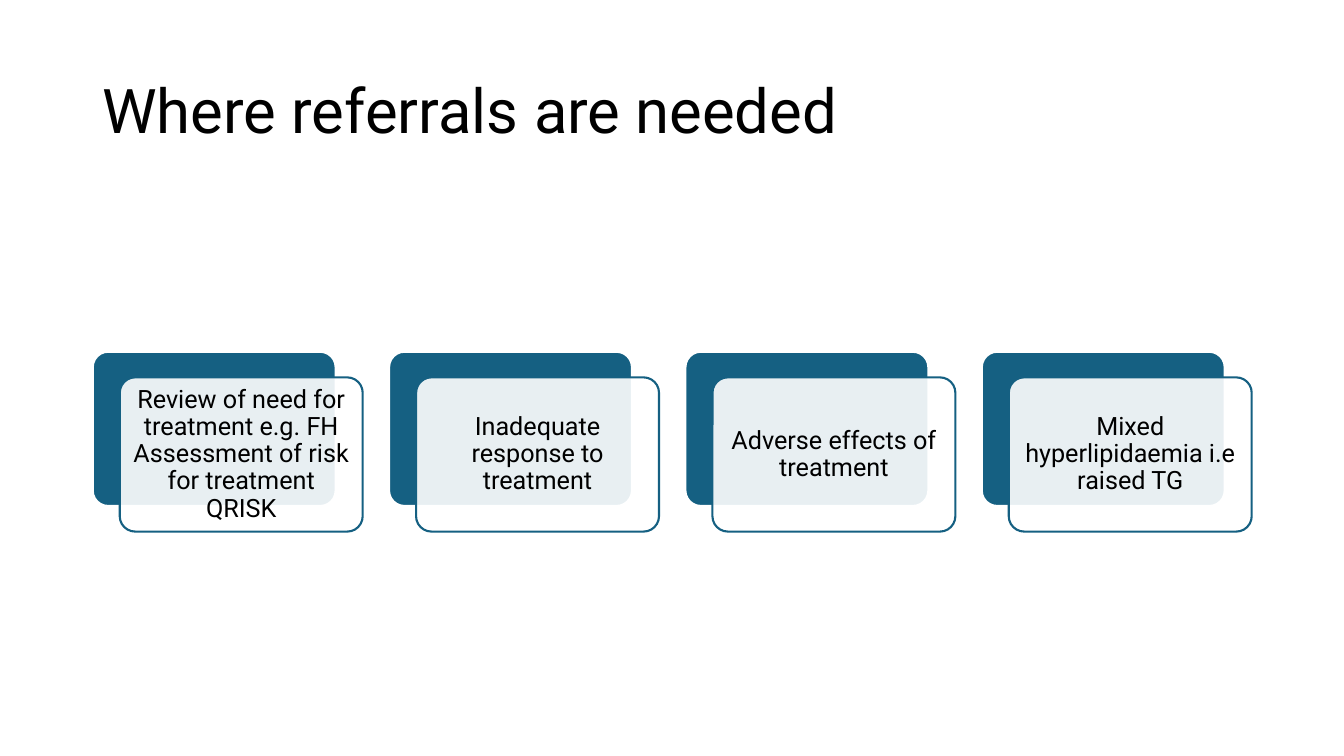
from dataclasses import dataclass

from lxml.etree import SubElement
from pptx import Presentation
from pptx.dml.color import RGBColor
from pptx.enum.shapes import MSO_SHAPE as Preset
from pptx.enum.text import MSO_ANCHOR as Anchor, PP_ALIGN as Align
from pptx.oxml.ns import qn
from pptx.slide import Slide
from pptx.util import Pt

COLOURS = {"teal": "156082", "white": "FFFFFF", "black": "000000"}
FONT = "Roboto"


@dataclass(frozen=True)
class Area:
    left: float
    top: float
    width: float
    height: float

    def moved(self, right: float, down: float) -> "Area":
        return Area(self.left + right, self.top + down, self.width, self.height)

    def shrunk(self, edge: float) -> "Area":
        return Area(self.left + edge, self.top + edge,
                    self.width - 2 * edge, self.height - 2 * edge)

    def lengths(self) -> tuple[Pt, Pt, Pt, Pt]:
        return Pt(self.left), Pt(self.top), Pt(self.width), Pt(self.height)


@dataclass(frozen=True)
class TextStyle:
    size: float
    align: Align
    inset_x: float
    inset_y: float


TITLE_AREA = Area(66, 28.75, 828, 104.4)
TITLE_STYLE = TextStyle(44, Align.LEFT, 7.2, 3.6)
CARD_STYLE = TextStyle(18, Align.CENTER, 5.4, 5.4)
FIRST_CARD = Area(66.24, 251.28, 173.52, 110.16)
CARD_PITCH = 211.68
FRONT_RIGHT, FRONT_DOWN = 19.3, 18.3
TEXT_EDGE = 3.24
REFERRALS = [
    "Review of need for treatment e.g. FH Assessment of risk for treatment QRISK",
    "Inadequate response to treatment",
    "Adverse effects of treatment",
    "Mixed hyperlipidaemia i.e raised TG",
]


def colour(name: str) -> RGBColor:
    return RGBColor.from_string(COLOURS[name])


def add_panel(page: Slide, area: Area, fill: str, line: str,
              opacity: int = 100) -> None:
    panel = page.shapes.add_shape(Preset.ROUNDED_RECTANGLE, *area.lengths())
    panel.adjustments[0] = 0.1
    panel.shadow.inherit = False
    panel.fill.solid()
    panel.fill.fore_color.rgb = colour(fill)
    panel.line.color.rgb = colour(line)
    panel.line.width = Pt(1.5)
    if opacity < 100:
        tint = panel.fill._xPr.find(qn("a:solidFill"))[0]
        SubElement(tint, qn("a:alpha"), val=str(opacity * 1000))


def add_text(page: Slide, area: Area, text: str, style: TextStyle) -> None:
    box = page.shapes.add_textbox(*area.lengths())
    frame = box.text_frame
    frame.word_wrap = True
    frame.vertical_anchor = Anchor.MIDDLE
    frame.margin_left = frame.margin_right = Pt(style.inset_x)
    frame.margin_top = frame.margin_bottom = Pt(style.inset_y)
    para = frame.paragraphs[0]
    para.alignment = style.align
    para.line_spacing = 0.9
    span = para.add_run()
    span.text = text
    span.font.name = FONT
    span.font.size = Pt(style.size)
    span.font.color.rgb = colour("black")


def add_card(page: Slide, back: Area, text: str) -> None:
    front = back.moved(FRONT_RIGHT, FRONT_DOWN)
    add_panel(page, back, "teal", "white")
    add_panel(page, front, "white", "teal", opacity=90)
    add_text(page, front.shrunk(TEXT_EDGE), text, CARD_STYLE)


def main() -> None:
    deck = Presentation()
    deck.slide_width, deck.slide_height = Pt(960), Pt(540)
    page = deck.slides.add_slide(deck.slide_layouts[6])

    # Title
    add_text(page, TITLE_AREA, "Where referrals are needed", TITLE_STYLE)

    # Row of referral cards
    for index, referral in enumerate(REFERRALS):
        add_card(page, FIRST_CARD.moved(index * CARD_PITCH, 0), referral)

    deck.save("out.pptx")


if __name__ == "__main__":
    main()
